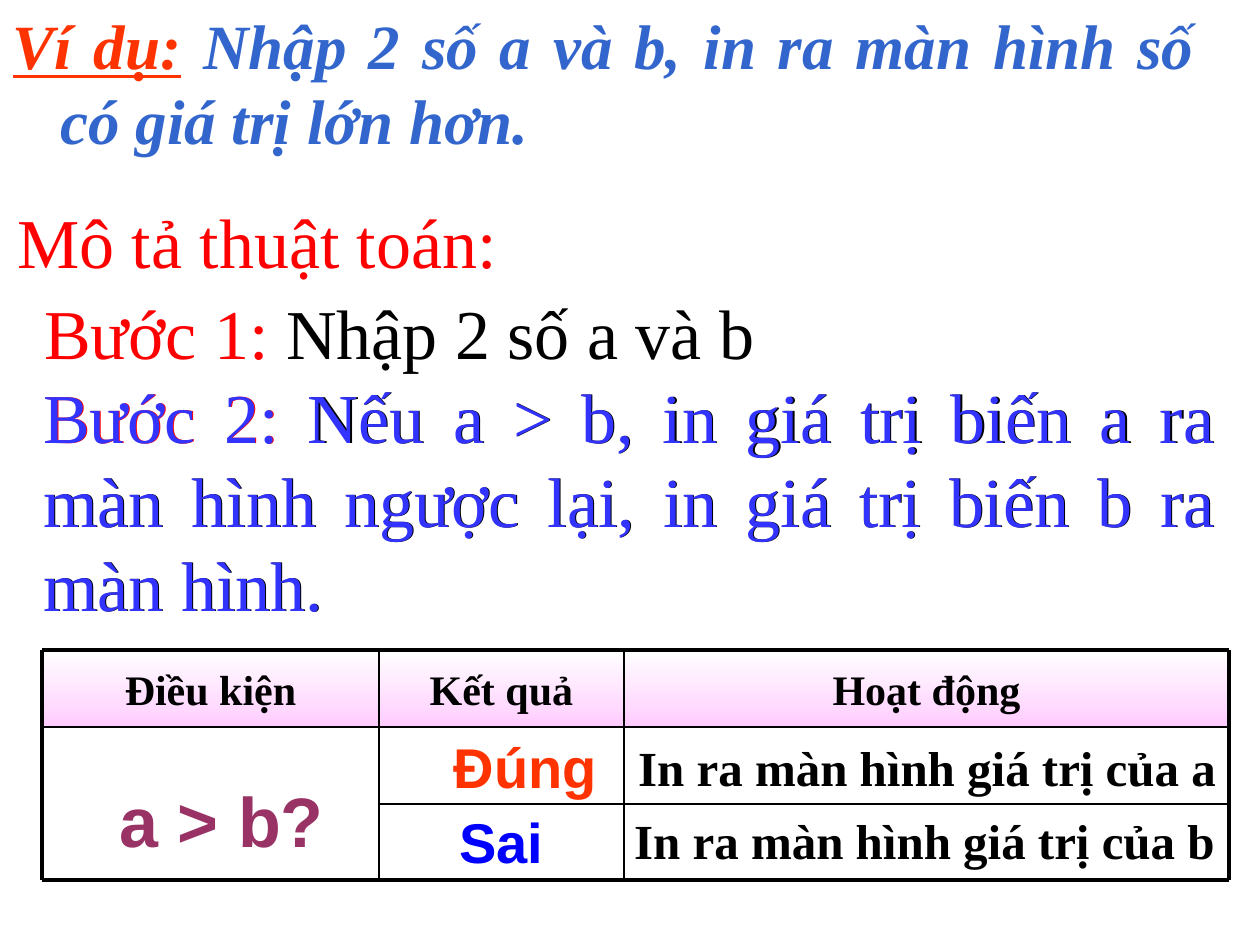
import pptx
import pptx.dml.color
import pptx.enum.shapes
import pptx.enum.text
import pptx.oxml.ns
import pptx.util
import lxml.etree

PX = 914400 // 126
ALIGN = pptx.enum.text.PP_ALIGN
ANCHOR = pptx.enum.text.MSO_ANCHOR

THEME = {
    "serif": "Times New Roman", "sans": "Arial",
    "orange": "FF3300", "title": "3366CC", "red": "FF0000", "black": "000000",
    "overlay": "3333FF", "plum": "993366", "blue": "0000FF",
    "header_top": "FFFFFF", "header_bottom": "FFCCFF",
    "title_size": 36, "body_size": 40, "header_size": 24,
    "result_size": 32, "action_size": 28,
    "thin": 1, "thick": 2.25,
}

# Content
TITLE = [("Ví dụ:", "orange"),
         (" Nhập 2 số a và b, in ra màn hình số có giá trị lớn hơn.", "title")]
STEP_2 = ("Bước 2: ", "Nếu a > b, in giá trị biến a ra màn hình ngược lại, "
          "in giá trị biến b ra màn hình.")
# box (left, top, width, height), paragraphs as (alignment, runs)
STEP_BOXES = [
    ((5, 192, 1260, 97), [(ALIGN.LEFT, [("Mô tả thuật toán:", "red")])]),
    ((32, 283, 1197, 352), [
        (ALIGN.LEFT, [("Bước 1: ", "red"), ("Nhập 2 số a và b", "black")]),
        (ALIGN.JUSTIFY, [(STEP_2[0], "red"), (STEP_2[1], "black")])]),
    ((31, 367, 1197, 267), [(ALIGN.JUSTIFY, [("".join(STEP_2), "overlay")])]),
]
HEADERS = ["Điều kiện", "Kết quả", "Hoạt động"]
# box, text, font, size, colour
ENTRIES = [
    ((106, 771, 231, 97), "a > b?", "sans", "body_size", "plum"),
    ((431, 726, 189, 81), "Đúng", "sans", "result_size", "orange"),
    ((407, 801, 189, 81), "Sai", "sans", "result_size", "blue"),
    ((609, 731, 636, 72), "In ra màn hình giá trị của a", "serif", "action_size", "black"),
    ((620, 804, 609, 72), "In ra màn hình giá trị của b", "serif", "action_size", "black"),
]

# Grid of the condition table
COLUMNS = [42, 379, 624, 1229]
ROWS = [650, 727, 804, 880]
LEFT, RIGHT, TOP, BOTTOM = COLUMNS[0], COLUMNS[-1], ROWS[0], ROWS[-1]
RULES = (
    [((x, TOP), (x, BOTTOM), "thin") for x in COLUMNS[1:-1]]
    + [((LEFT, ROWS[1]), (RIGHT, ROWS[1]), "thin"),
       ((COLUMNS[1], ROWS[2]), (RIGHT, ROWS[2]), "thin")]
    + [((x, TOP), (x, BOTTOM), "thick") for x in (LEFT, RIGHT)]
    + [((LEFT, y), (RIGHT, y), "thick") for y in (TOP, BOTTOM)]
)


def rgb(name):
    return pptx.dml.color.RGBColor.from_string(THEME[name])


def scaled(values):
    return [value * PX for value in values]


def add_run(paragraph, text, font, size, color, bold=False):
    run = paragraph.add_run()
    run.text = text
    run.font.name = THEME[font]
    run.font.size = pptx.util.Pt(THEME[size])
    run.font.color.rgb = rgb(color)
    run.font.bold = bold
    return run


def add_title(slide):
    title = slide.shapes.title
    title.left, title.top, title.width, title.height = scaled((0, 0, 1207, 165))
    frame = title.text_frame
    frame.word_wrap = True
    frame.auto_size = pptx.enum.text.MSO_AUTO_SIZE.NONE
    frame.vertical_anchor = ANCHOR.TOP
    paragraph = frame.paragraphs[0]
    paragraph.alignment = ALIGN.JUSTIFY
    # Hanging indent
    properties = paragraph._p.get_or_add_pPr()
    properties.set("marL", str(48 * PX))
    properties.set("indent", str(-48 * PX))
    for index, (text, color) in enumerate(TITLE):
        run = add_run(paragraph, text, "serif", "title_size", color, bold=True)
        run.font.italic = True
        run.font.underline = index == 0


def add_text_box(slide, box):
    frame = slide.shapes.add_textbox(*scaled(box)).text_frame
    frame.word_wrap = True
    return frame


def add_steps(slide):
    for box, paragraphs in STEP_BOXES:
        frame = add_text_box(slide, box)
        for index, (alignment, runs) in enumerate(paragraphs):
            paragraph = frame.add_paragraph() if index else frame.paragraphs[0]
            paragraph.alignment = alignment
            for text, color in runs:
                add_run(paragraph, text, "serif", "body_size", color)


def add_header(shapes, text, left, right):
    shape = shapes.add_shape(
        pptx.enum.shapes.MSO_SHAPE.RECTANGLE,
        *scaled((left, TOP, right - left, ROWS[1] - TOP)))
    shape.shadow.inherit = False
    shape.line.fill.background()
    shape.fill.gradient()
    shape.fill.gradient_angle = 270
    for stop, color in zip(shape.fill.gradient_stops, ("header_top", "header_bottom")):
        stop.color.rgb = rgb(color)
    shape.text_frame.vertical_anchor = ANCHOR.MIDDLE
    paragraph = shape.text_frame.paragraphs[0]
    paragraph.alignment = ALIGN.CENTER
    add_run(paragraph, text, "serif", "header_size", "black", bold=True)


def add_rule(shapes, start, end, weight):
    line = shapes.add_connector(
        pptx.enum.shapes.MSO_CONNECTOR.STRAIGHT, *scaled(start + end))
    line.line.color.rgb = rgb("black")
    line.line.width = pptx.util.Pt(THEME[weight])
    lxml.etree.SubElement(line._element.spPr, pptx.oxml.ns.qn("a:effectLst"))


def add_condition_table(slide):
    # Header cells and ruled grid
    shapes = slide.shapes.add_group_shape().shapes
    for text, left, right in zip(HEADERS, COLUMNS, COLUMNS[1:]):
        add_header(shapes, text, left, right)
    for start, end, weight in RULES:
        add_rule(shapes, start, end, weight)
    # Entries
    for box, *content in ENTRIES:
        paragraph = add_text_box(slide, box).paragraphs[0]
        paragraph.alignment = ALIGN.CENTER
        add_run(paragraph, *content, bold=True)


def main():
    presentation = pptx.Presentation()
    presentation.slide_width = 1260 * PX
    presentation.slide_height = 945 * PX
    slide = presentation.slides.add_slide(presentation.slide_layouts[5])
    add_title(slide)
    add_steps(slide)
    add_condition_table(slide)
    presentation.save("out.pptx")


if __name__ == "__main__":
    main()
